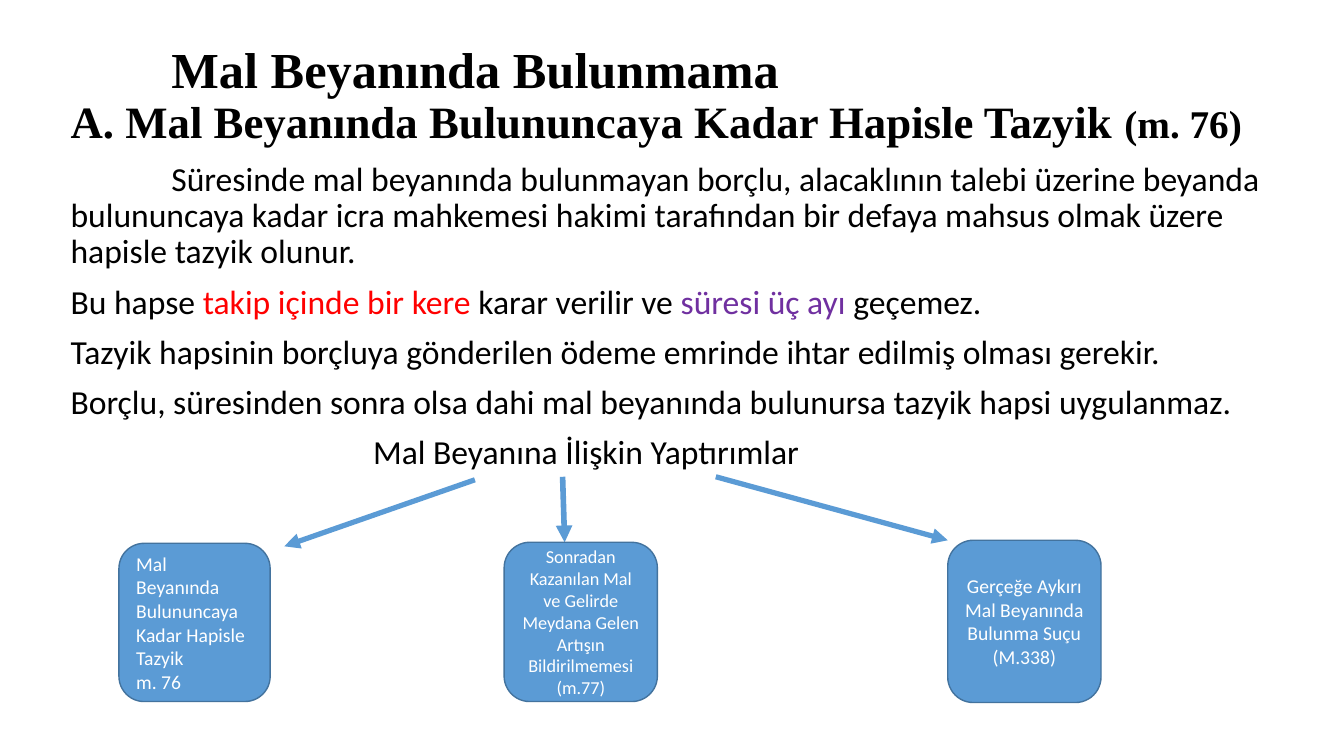
import pptx
import pptx.util
import pptx.dml.color
import pptx.enum.shapes
import pptx.enum.text
import pptx.oxml.ns
import lxml.etree

HUES = {
    "ink": "000000",
    "red": "FF0000",
    "plum": "7030A0",
    "blue": "5B9BD5",
    "edge": "43739E",
    "white": "FFFFFF",
}
COLS, ROWS = 133.3, 75
ALIGN = pptx.enum.text.PP_ALIGN
ANCHOR = pptx.enum.text.MSO_ANCHOR


class Deck:
    def __init__(self):
        self.deck = pptx.Presentation()
        self.deck.slide_width = pptx.util.Inches(13.33)
        self.deck.slide_height = pptx.util.Inches(7.5)
        self.slide = self.deck.slides.add_slide(self.deck.slide_layouts[1])
        title = self.slide.shapes.title.element
        title.getparent().remove(title)

    def grid(self, col, row):
        return (int(self.deck.slide_width * col / COLS),
                int(self.deck.slide_height * row / ROWS))

    def hue(self, name):
        return pptx.dml.color.RGBColor.from_string(HUES[name])

    def style(self, font, size, hue, face="Calibri", bold=False):
        font.size = pptx.util.Pt(size)
        font.name = face
        font.bold = bold
        font.color.rgb = self.hue(hue)

    def body(self, place, size):
        holder = self.slide.placeholders[1]
        holder.left, holder.top = self.grid(*place)
        holder.width, holder.height = self.grid(*size)
        frame = holder.text_frame
        frame.word_wrap = True
        frame.auto_size = pptx.enum.text.MSO_AUTO_SIZE.NONE
        frame.vertical_anchor = ANCHOR.TOP
        return frame

    def para(self, frame, first=False, indent=0):
        para = frame.paragraphs[0] if first else frame.add_paragraph()
        para.alignment = ALIGN.LEFT
        para.line_spacing = 0.9
        para.space_before = pptx.util.Pt(10)
        props = para._p.get_or_add_pPr()
        props.set("marL", "0")
        props.set("indent", str(self.grid(indent, 0)[0]))
        lxml.etree.SubElement(props, pptx.oxml.ns.qn("a:buNone"))
        return para

    def head(self, frame, indent, lines):
        para = self.para(frame, True, indent)
        self.style(para.font, 32, "ink", "Times New Roman", True)
        for spot, line in enumerate(lines):
            if spot:
                para.add_line_break()
            for text, size in line:
                run = para.add_run()
                run.text = text
                run.font.size = pptx.util.Pt(size)

    def prose(self, frame, indent, parts):
        para = self.para(frame, indent=indent)
        self.style(para.font, 24, "ink")
        for text, hue in parts:
            run = para.add_run()
            run.text = text
            if hue != "ink":
                run.font.color.rgb = self.hue(hue)

    def arrow(self, start, end, width):
        line = self.slide.shapes.add_connector(
            pptx.enum.shapes.MSO_CONNECTOR.STRAIGHT,
            *self.grid(*start), *self.grid(*end))
        line.line.color.rgb = self.hue("blue")
        line.line.width = pptx.util.Pt(width)
        tip = lxml.etree.SubElement(
            line.get_or_add_ln(), pptx.oxml.ns.qn("a:tailEnd"))
        tip.set("type", "triangle")
        lxml.etree.SubElement(
            line.element.spPr, pptx.oxml.ns.qn("a:effectLst"))

    def box(self, place, size, texts, points, align):
        box = self.slide.shapes.add_shape(
            pptx.enum.shapes.MSO_SHAPE.ROUNDED_RECTANGLE,
            *self.grid(*place), *self.grid(*size))
        box.shadow.inherit = False
        box.fill.solid()
        box.fill.fore_color.rgb = self.hue("blue")
        box.line.color.rgb = self.hue("edge")
        box.line.width = pptx.util.Pt(1)
        frame = box.text_frame
        frame.word_wrap = True
        frame.vertical_anchor = ANCHOR.MIDDLE
        frame.text = "\n".join(texts)
        for para in frame.paragraphs:
            para.alignment = align
            self.style(para.font, points, "white")


def main():
    deck = Deck()
    frame = deck.body((6, 4), (122, 66.6))
    deck.head(frame, 10, [
        [("Mal Beyanında Bulunmama", 36)],
        [("A. Mal Beyanında Bulununcaya Kadar Hapisle Tazyik ", 32),
         ("(m. 76)", 28)],
    ])
    for indent, parts in [
        (10, [("Süresinde mal beyanında bulunmayan borçlu, alacaklının talebi "
               "üzerine beyanda bulununcaya kadar icra mahkemesi hakimi "
               "tarafından bir defaya mahsus olmak üzere hapisle tazyik "
               "olunur.", "ink")]),
        (0, [("Bu hapse ", "ink"), ("takip içinde bir kere ", "red"),
             ("karar verilir ve ", "ink"), ("süresi üç ayı ", "plum"),
             ("geçemez.", "ink")]),
        (0, [("Tazyik hapsinin borçluya gönderilen ödeme emrinde ihtar "
              "edilmiş olması gerekir.", "ink")]),
        (0, [("Borçlu, süresinden sonra olsa dahi mal beyanında bulunursa "
              "tazyik hapsi uygulanmaz.", "ink")]),
        (30, [("Mal Beyanına İlişkin Yaptırımlar", "ink")]),
    ]:
        deck.prose(frame, indent, parts)

    for start, end, width in [
        ((55.8, 47.3), (56, 53.8), 4),
        ((47.1, 47.6), (28.2, 54.2), 3.75),
        ((71, 47.3), (94, 53.6), 3.75),
    ]:
        deck.arrow(start, end, width)

    for place, size, texts, points, align in [
        ((11.8, 53.9), (15, 15.7),
         ["Mal Beyanında Bulununcaya", "Kadar Hapisle Tazyik", "m. 76"],
         14, ALIGN.LEFT),
        ((50, 53.8), (15.2, 15.8),
         ["Sonradan Kazanılan Mal ve Gelirde Meydana Gelen Artışın "
          "Bildirilmemesi (m.77)"], 13, ALIGN.CENTER),
        ((94, 53.6), (15.2, 16.1),
         ["Gerçeğe Aykırı Mal Beyanında Bulunma Suçu (M.338)"],
         14, ALIGN.CENTER),
    ]:
        deck.box(place, size, texts, points, align)
    deck.deck.save("out.pptx")


if __name__ == "__main__":
    main()
